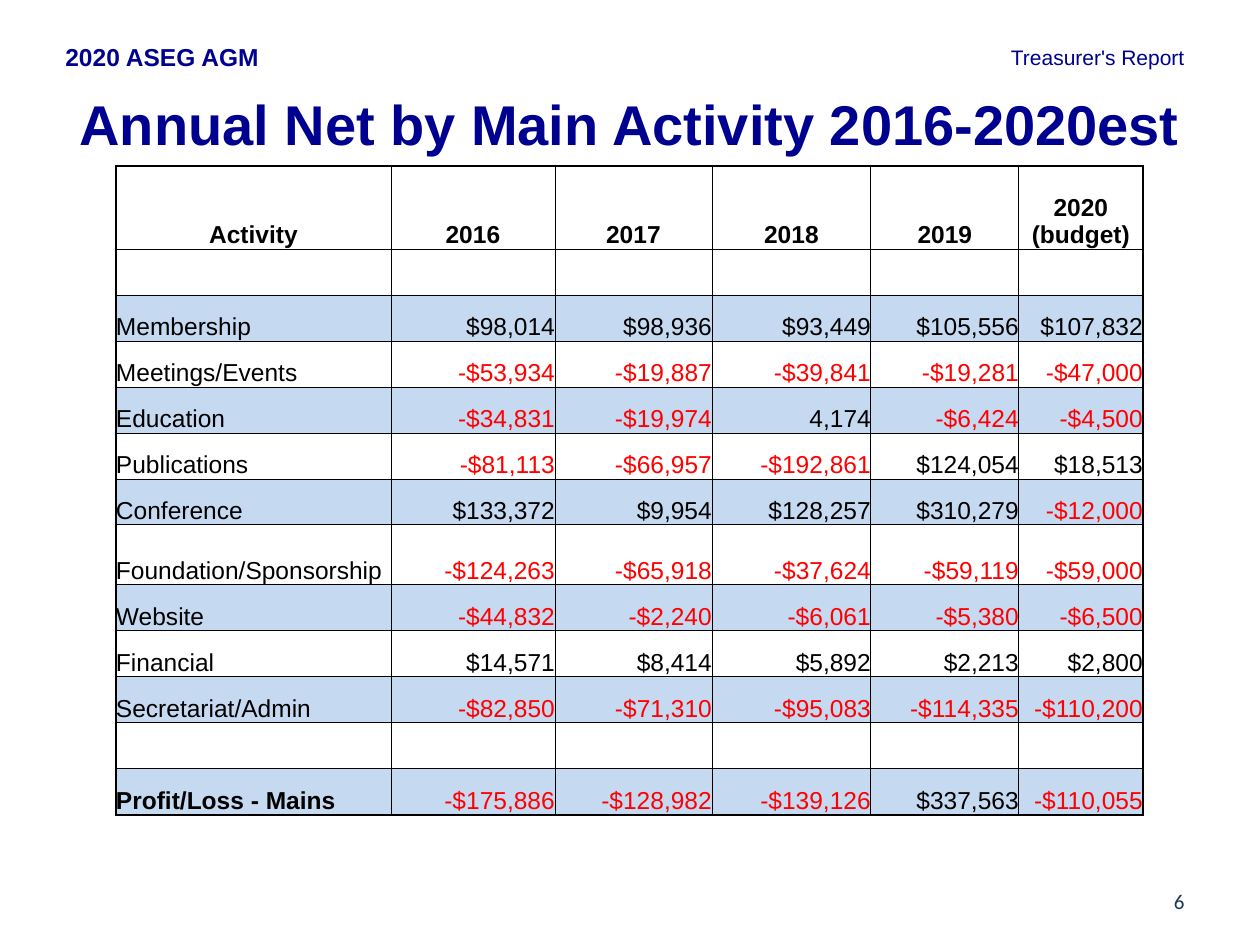
"""Build the treasurer's slide of annual net results by main activity."""
from lxml.etree import SubElement
from pptx import Presentation
from pptx.dml.color import RGBColor
from pptx.enum.text import MSO_ANCHOR, MSO_AUTO_SIZE, PP_ALIGN
from pptx.oxml.ns import qn
from pptx.util import Emu, Pt

SCALE = 914400 / 126
COLORS = {"navy": "000090", "number": "17375E", "black": "000000", "loss": "FF0000", "band": "C5D9F1"}
YEARS = ["Activity", "2016", "2017", "2018", "2019", "2020 (budget)"]
BLANK = [""] * len(YEARS)
ACTIVITIES = [
    ["Membership", "$98,014", "$98,936", "$93,449", "$105,556", "$107,832"],
    ["Meetings/Events", "-$53,934", "-$19,887", "-$39,841", "-$19,281", "-$47,000"],
    ["Education", "-$34,831", "-$19,974", "4,174", "-$6,424", "-$4,500"],
    ["Publications", "-$81,113", "-$66,957", "-$192,861", "$124,054", "$18,513"],
    ["Conference", "$133,372", "$9,954", "$128,257", "$310,279", "-$12,000"],
    ["Foundation/Sponsorship", "-$124,263", "-$65,918", "-$37,624", "-$59,119", "-$59,000"],
    ["Website", "-$44,832", "-$2,240", "-$6,061", "-$5,380", "-$6,500"],
    ["Financial", "$14,571", "$8,414", "$5,892", "$2,213", "$2,800"],
    ["Secretariat/Admin", "-$82,850", "-$71,310", "-$95,083", "-$114,335", "-$110,200"],
]
TOTAL = ["Profit/Loss - Mains", "-$175,886", "-$128,982", "-$139,126", "$337,563", "-$110,055"]
ROWS = [YEARS, BLANK, *ACTIVITIES, BLANK, TOTAL]
COLUMN_WIDTHS = [275, 164, 157, 159, 148, 124]
ROW_HEIGHTS = [83] + [46] * 6 + [60] + [46] * 5


def px(length):
    return Emu(round(length * SCALE))


class SlideBuilder:
    def __init__(self, slide, font="Arial"):
        self.slide = slide
        self.font = font

    def fill_text(self, frame, text, size, color, align, bold=False, font=None):
        frame.text = text
        paragraph = frame.paragraphs[0]
        paragraph.alignment = align
        paragraph.font.name = font or self.font
        paragraph.font.size = Pt(size)
        paragraph.font.bold = bold
        paragraph.font.color.rgb = RGBColor.from_string(COLORS[color])
        return paragraph

    def title(self, text, left, top, width, height):
        shape = self.slide.shapes.title
        shape.left, shape.top, shape.width, shape.height = map(px, (left, top, width, height))
        frame = shape.text_frame
        frame.auto_size = MSO_AUTO_SIZE.NONE
        frame.vertical_anchor = MSO_ANCHOR.TOP
        frame.margin_top = px(12)
        self.fill_text(frame, text, 32, "navy", PP_ALIGN.CENTER, bold=True)

    def text(self, text, box, size, color, align, anchor=MSO_ANCHOR.TOP, **style):
        frame = self.slide.shapes.add_textbox(*map(px, box)).text_frame
        frame.word_wrap = True
        frame.vertical_anchor = anchor
        self.fill_text(frame, text, size, color, align, **style)

    def borders(self, cell, widths):
        properties = cell._tc.get_or_add_tcPr()
        for side, width in widths.items():
            line = SubElement(properties, qn(f"a:ln{side}"), w=str(Pt(width)))
            fill = SubElement(line, qn("a:solidFill"))
            SubElement(fill, qn("a:srgbClr"), val=COLORS["black"])

    def cell(self, cell, text, row, column):
        cell.margin_left = cell.margin_right = cell.margin_top = cell.margin_bottom = 0
        cell.vertical_anchor = MSO_ANCHOR.BOTTOM
        last_row, last_column = len(ROWS) - 1, len(YEARS) - 1
        self.borders(cell, {
            "L": 1 if column == 0 else 0.5,
            "R": 1 if column == last_column else 0.5,
            "T": 1 if row == 0 else 0.5,
            "B": 1 if row == last_row else 0.5,
        })
        if row and row % 2 == 0:
            cell.fill.solid()
            cell.fill.fore_color.rgb = RGBColor.from_string(COLORS["band"])
        else:
            cell.fill.background()
        align = PP_ALIGN.CENTER if row == 0 else PP_ALIGN.RIGHT if column else PP_ALIGN.LEFT
        bold = row == 0 or (row == last_row and column == 0)
        color = "loss" if text.startswith("-") else "black"
        paragraph = self.fill_text(cell.text_frame, text, 14, color, align, bold)
        if row and column and text:
            paragraph.space_after = Pt(6)

    def table(self, left, top):
        box = (left, top, sum(COLUMN_WIDTHS), sum(ROW_HEIGHTS))
        table = self.slide.shapes.add_table(len(ROWS), len(YEARS), *map(px, box)).table
        table.first_row = table.horz_banding = False
        for column, width in zip(table.columns, COLUMN_WIDTHS):
            column.width = px(width)
        for row, height in zip(table.rows, ROW_HEIGHTS):
            row.height = px(height)
        for row, values in enumerate(ROWS):
            for column, value in enumerate(values):
                self.cell(table.cell(row, column), value, row, column)


def main():
    presentation = Presentation()
    presentation.slide_width, presentation.slide_height = px(1260), px(945)
    builder = SlideBuilder(presentation.slides.add_slide(presentation.slide_layouts[5]))
    builder.text("Treasurer's Report", (630, 38, 567, 38), 12, "navy", PP_ALIGN.RIGHT)
    builder.title("Annual Net by Main Activity 2016-2020est", 63, 78, 1134, 101)
    builder.text("2020 ASEG AGM", (53, 36, 577, 42), 14, "navy", PP_ALIGN.LEFT, bold=True)
    builder.text("6", (903, 876, 294, 50), 12, "number", PP_ALIGN.RIGHT, MSO_ANCHOR.MIDDLE, font="Calibri")
    builder.table(116, 166)
    presentation.save("out.pptx")


if __name__ == "__main__":
    main()
